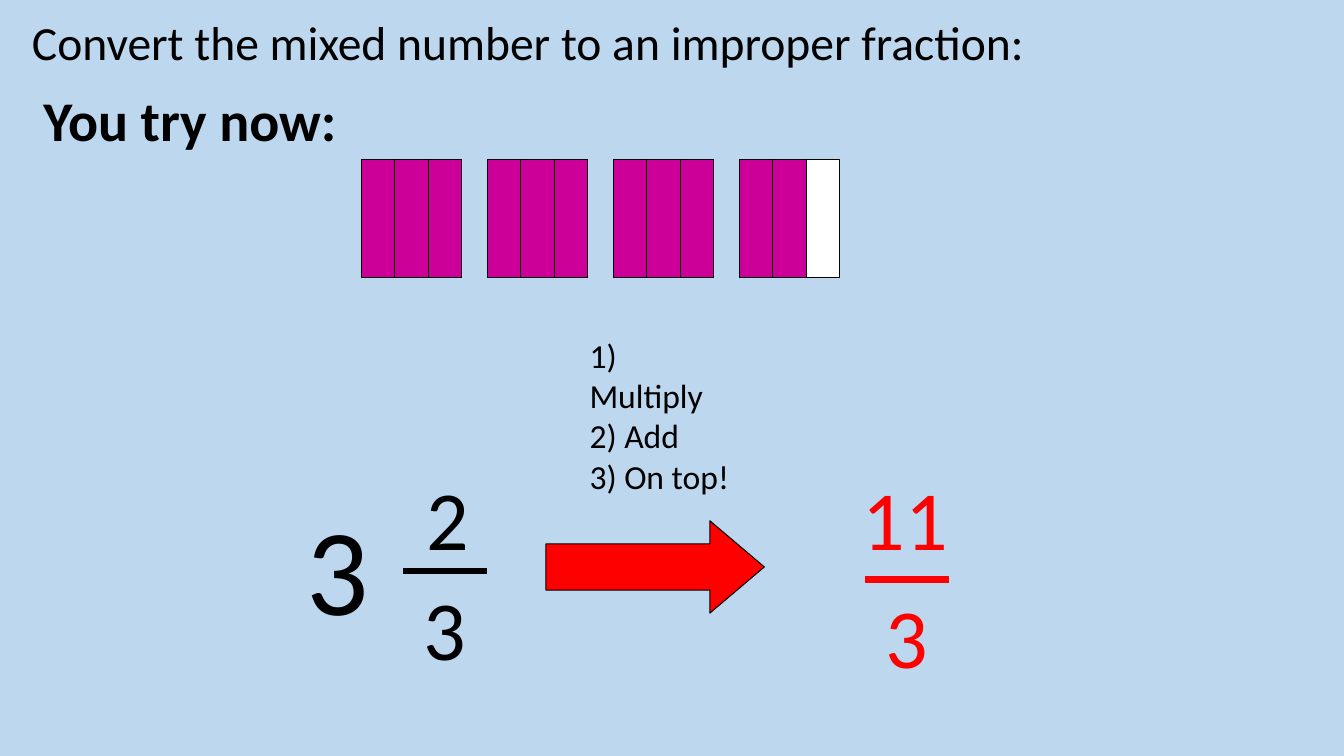
import pptx
import pptx.dml.color
import pptx.enum.shapes
import pptx.enum.text
import pptx.oxml.xmlchemy
import pptx.util

PX = 9525
FONT = "Calibri"
SKY = pptx.dml.color.RGBColor(0xBD, 0xD7, 0xEE)
BLACK = pptx.dml.color.RGBColor(0, 0, 0)
RED = pptx.dml.color.RGBColor(0xFF, 0, 0)
WHITE = pptx.dml.color.RGBColor(0xFF, 0xFF, 0xFF)
MAGENTA = pptx.dml.color.RGBColor(0xCC, 0, 0x99)
SHAPE = pptx.enum.shapes.MSO_SHAPE
ALIGN = pptx.enum.text.PP_ALIGN
ANCHOR = pptx.enum.text.MSO_ANCHOR


def px(*values):
    return [v * PX for v in values]


def add_text(s, box, lines, size, color=BLACK, align=ALIGN.LEFT, indent=0,
             bold=False, anchor=ANCHOR.TOP, spacing=1.0):
    tf = s.shapes.add_textbox(*px(*box)).text_frame
    tf.word_wrap = True
    tf.vertical_anchor = anchor
    tf.margin_left += indent * PX
    p = tf.paragraphs[0]
    p.alignment = align
    p.line_spacing = spacing
    for i, line in enumerate(lines):
        if i:
            p.add_line_break()
        r = p.add_run()
        r.text = line
        r.font.name = FONT
        r.font.size = pptx.util.Pt(size)
        r.font.bold = bold
        r.font.color.rgb = color


def add_heading(s, box, text, size, bold=False):
    add_text(s, box, [text], size, bold=bold, anchor=ANCHOR.MIDDLE, spacing=0.9)


def add_number(s, box, text, size, color, indent=0):
    add_text(s, box, [text], size, color, ALIGN.CENTER, indent)


def add_filled(s, kind, box, fill):
    sp = s.shapes.add_shape(kind, *px(*box))
    sp.shadow.inherit = False
    sp.fill.solid()
    sp.fill.fore_color.rgb = fill
    sp.line.color.rgb = BLACK
    sp.line.width = pptx.util.Pt(0.75)
    return sp


def add_bar(s, x, y, width, color):
    bar = s.shapes.add_connector(
        pptx.enum.shapes.MSO_CONNECTOR.STRAIGHT, *px(x, y, x + width, y))
    bar.line.color.rgb = color
    bar.line.width = pptx.util.Pt(4.5)
    bar._element.spPr.append(pptx.oxml.xmlchemy.OxmlElement("a:effectLst"))


def add_fraction(s, bar_x, bar_y, top_x, top_width, top, bottom, color):
    add_number(s, (top_x, 440, top_width, 106), top, 60, color, indent=12)
    add_number(s, (bar_x + 8, bar_y, 64, 106), bottom, 60, color)
    add_bar(s, bar_x, bar_y, 80, color)


def add_thirds(s, x, y, wholes, shaded):
    for i in range((wholes + 1) * 3):
        group, part = divmod(i, 3)
        fill = MAGENTA if i < wholes * 3 + shaded else WHITE
        add_filled(s, SHAPE.RECTANGLE,
                   (x + group * 120 + part * 32, y, 32, 112), fill)


def main():
    prs = pptx.Presentation()
    prs.slide_width, prs.slide_height = px(1280, 720)
    s = prs.slides.add_slide(prs.slide_layouts[6])
    s.background.fill.solid()
    s.background.fill.fore_color.rgb = SKY

    add_heading(s, (32, 48, 1104, 139), "You try now:", 40, bold=True)
    add_fraction(s, 824, 552, 784, 144, "11", "3", RED)
    arrow = add_filled(s, SHAPE.RIGHT_ARROW, (520, 496, 208, 88), RED)
    arrow.adjustments[1] = 0.59
    add_fraction(s, 384, 544, 368, 104, "2", "3", BLACK)
    add_number(s, (264, 464, 104, 151), "3", 88, BLACK, indent=12)
    add_thirds(s, 344, 152, 3, 2)
    add_text(s, (552, 314, 154, 126),
             ["1) Multiply", "2) Add", "3) On top!"], 24)
    add_heading(s, (21, -17, 1222, 120),
                "Convert the mixed number to an improper fraction:", 34)
    prs.save("out.pptx")


if __name__ == "__main__":
    main()
